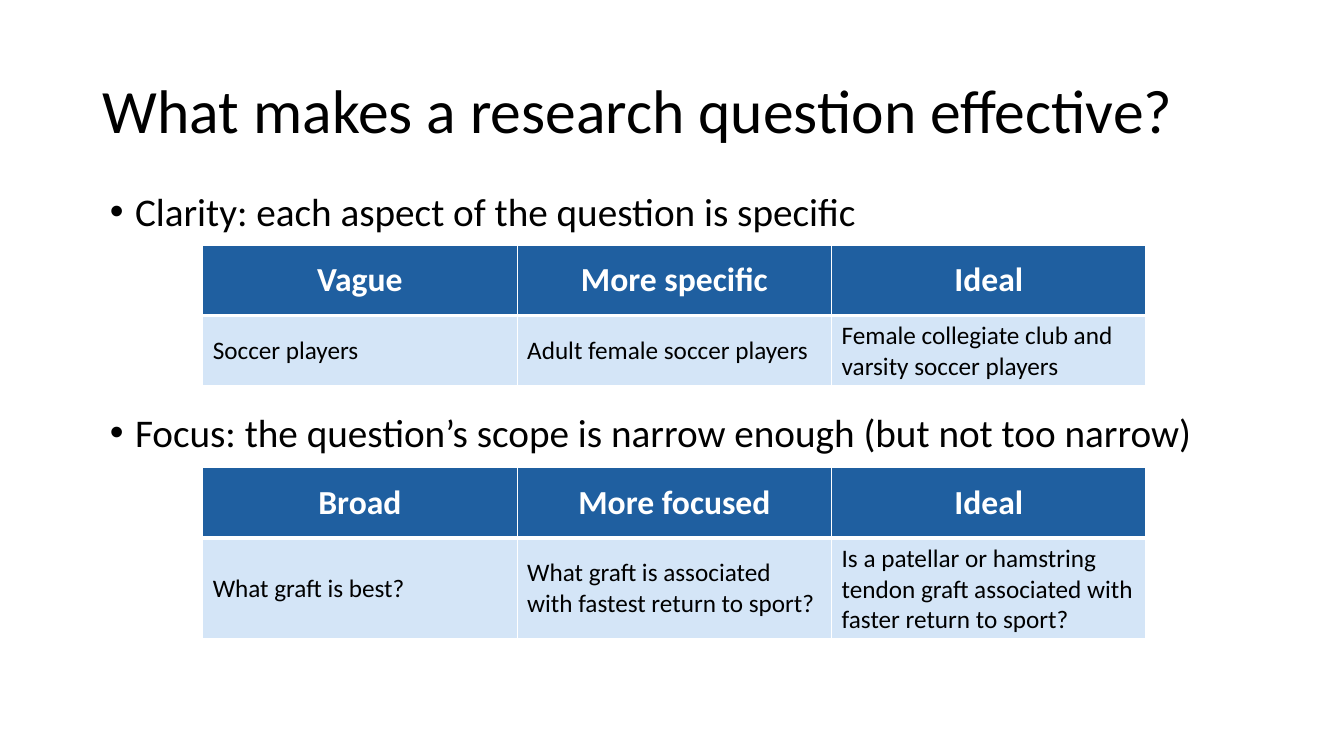
from lxml import etree
from pptx import Presentation
from pptx import util as u
from pptx.dml.color import RGBColor
from pptx.enum import text
from pptx.oxml.ns import qn

BLACK, WHITE, BLUE, PALE = "000000", "FFFFFF", "1F5FA0", "D4E5F7"


def color(value):
    return RGBColor.from_string(value)


class SlideBuilder:
    """Style and current slide; lengths are percentages of the slide's size."""

    font_name = "Calibri"

    def __init__(self, presentation):
        self.width = presentation.slide_width
        self.height = presentation.slide_height
        self.slide = presentation.slides.add_slide(presentation.slide_layouts[5])

    def x(self, share):
        return u.Emu(round(self.width * share / 100))

    def y(self, share):
        return u.Emu(round(self.height * share / 100))

    def box(self, left, top, width, height):
        return self.x(left), self.y(top), self.x(width), self.y(height)

    def style(self, paragraph, size, fill=BLACK, bold=False, align=text.PP_ALIGN.LEFT):
        paragraph.alignment = align
        font = paragraph.font
        font.name, font.size, font.bold = self.font_name, u.Pt(size), bold
        font.color.rgb = color(fill)

    def title(self, words, *area):
        shape = self.slide.shapes.title
        shape.left, shape.top, shape.width, shape.height = self.box(*area)
        frame = shape.text_frame
        frame.text = words
        frame.auto_size = text.MSO_AUTO_SIZE.NONE
        frame.vertical_anchor = text.MSO_ANCHOR.MIDDLE
        frame.paragraphs[0].line_spacing = 0.9
        self.style(frame.paragraphs[0], 44)

    def bullet(self, words, *area):
        frame = self.slide.shapes.add_textbox(*self.box(*area)).text_frame
        frame.word_wrap = True
        paragraph = frame.paragraphs[0]
        paragraph.text = words
        paragraph.line_spacing = 0.9
        properties = paragraph._p.get_or_add_pPr()
        indent = u.Inches(0.25)
        properties.set("marL", str(indent))
        properties.set("indent", str(-indent))
        etree.SubElement(properties, qn("a:buFont"), typeface="Arial")
        etree.SubElement(properties, qn("a:buChar"), char="•")
        self.style(paragraph, 28)

    def borders(self, cell, bottom):
        properties = cell._tc.get_or_add_tcPr()
        for side, points in (("L", 1), ("R", 1), ("T", 1), ("B", bottom)):
            line = etree.SubElement(properties, qn(f"a:ln{side}"), w=str(u.Pt(points)))
            fill = etree.SubElement(line, qn("a:solidFill"))
            etree.SubElement(fill, qn("a:srgbClr"), val=WHITE)

    def cell(self, cell, words, header):
        cell.text = words
        cell.vertical_anchor = text.MSO_ANCHOR.MIDDLE
        self.borders(cell, 3 if header else 1)
        cell.fill.solid()
        cell.fill.fore_color.rgb = color(BLUE if header else PALE)
        paragraph = cell.text_frame.paragraphs[0]
        if header:
            self.style(paragraph, 24, WHITE, True, text.PP_ALIGN.CENTER)
        else:
            self.style(paragraph, 18)

    def table(self, rows, left, top, width, heights):
        area = self.box(left, top, width, sum(heights))
        table = self.slide.shapes.add_table(len(rows), len(rows[0]), *area).table
        for index, (words, height) in enumerate(zip(rows, heights)):
            table.rows[index].height = self.y(height)
            for cell, entry in zip(table.rows[index].cells, words):
                self.cell(cell, entry, header=index == 0)


def main():
    presentation = Presentation()
    presentation.slide_width = u.Inches(13.33)
    presentation.slide_height = u.Inches(7.5)
    builder = SlideBuilder(presentation)
    builder.title("What makes a research question effective?", 6.9, 5.33, 86.27, 19.33)

    clarity = [
        ("Vague", "More specific", "Ideal"),
        ("Soccer players", "Adult female soccer players",
         "Female collegiate club and varsity soccer players"),
    ]
    focus = [
        ("Broad", "More focused", "Ideal"),
        ("What graft is best?", "What graft is associated with fastest return to sport?",
         "Is a patellar or hamstring tendon graft associated with faster return to sport?"),
    ]
    sections = [
        ("Clarity: each aspect of the question is specific",
         24.8, 26.27, clarity, 32.4, (9.33, 9.33)),
        ("Focus: the question’s scope is narrow enough (but not too narrow)",
         54, 33.47, focus, 61.87, (9.33, 13.33)),
    ]
    for words, top, height, rows, table_top, row_heights in sections:
        builder.bullet(words, 7.43, top, 86.27, height)
        builder.table(rows, 15.08, table_top, 70.2, row_heights)
    presentation.save("out.pptx")


if __name__ == "__main__":
    main()
